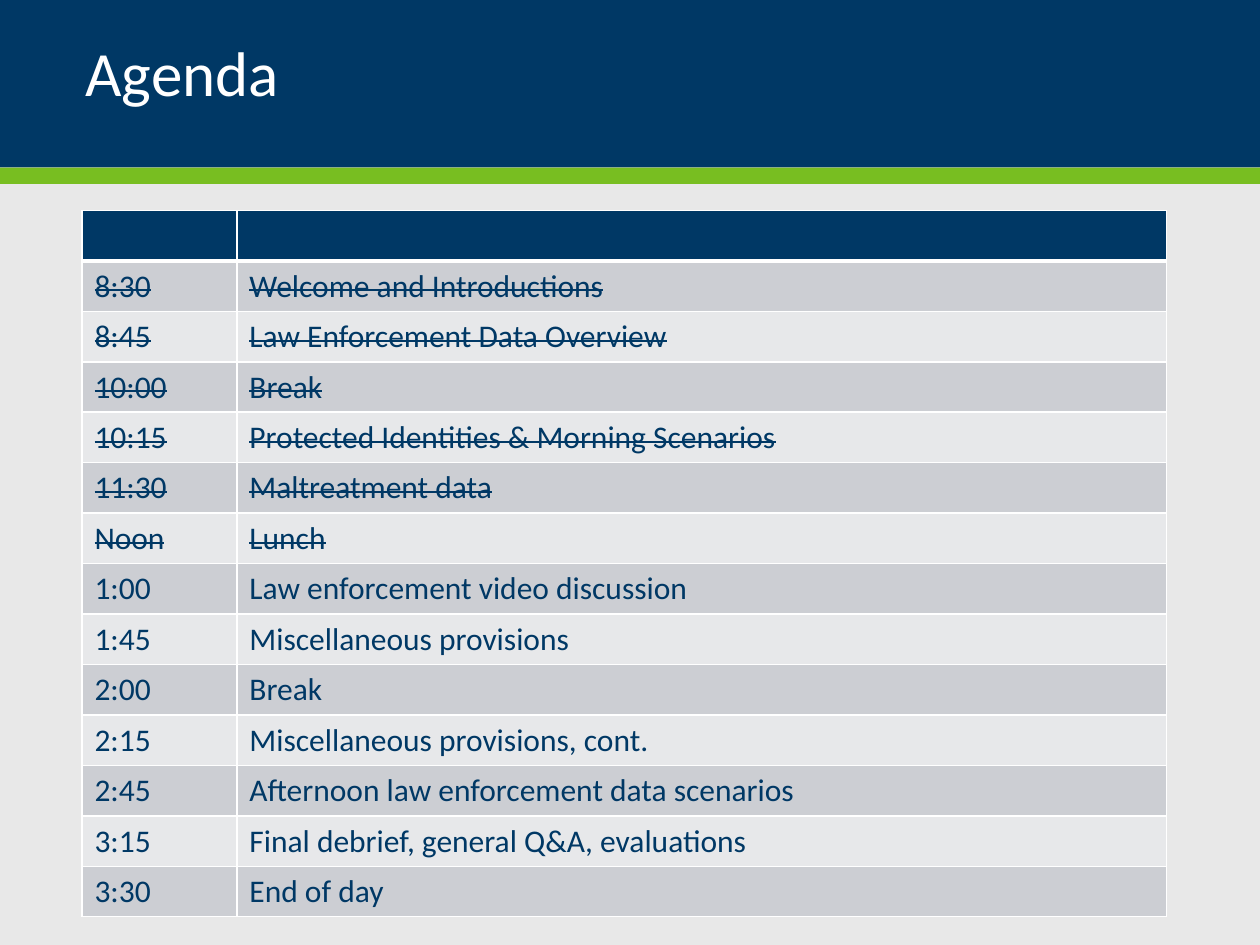
import pptx
import pptx.dml.color
import pptx.enum.shapes
import pptx.enum.text
import pptx.oxml
import pptx.oxml.ns
import pptx.util

NAVY, GREEN, WHITE = "003865", "78BE21", "FFFFFF"
PAGE, DARK_BAND, LIGHT_BAND = "E8E8E8", "CCCED3", "E7E8EA"
COLUMNS, ROWS = 100, 75

DONE = [
    ("8:30", "Welcome and Introductions"),
    ("8:45", "Law Enforcement Data Overview"),
    ("10:00", "Break"),
    ("10:15", "Protected Identities & Morning Scenarios"),
    ("11:30", "Maltreatment data"),
    ("Noon", "Lunch"),
]
UPCOMING = [
    ("1:00", "Law enforcement video discussion"),
    ("1:45", "Miscellaneous provisions"),
    ("2:00", "Break"),
    ("2:15", "Miscellaneous provisions, cont."),
    ("2:45", "Afternoon law enforcement data scenarios"),
    ("3:15", "Final debrief, general Q&A, evaluations"),
    ("3:30", "End of day"),
]


def rgb(value):
    return pptx.dml.color.RGBColor.from_string(value)


class AgendaSlide:
    font = "Calibri"

    def __init__(self, prs):
        self.s = prs.slides.add_slide(prs.slide_layouts[6])
        self.column = prs.slide_width / COLUMNS
        self.row = prs.slide_height / ROWS
        self.paint(self.s.background, PAGE)

    def box(self, left, top, width, height):
        units = (self.column, self.row) * 2
        return [round(n * unit) for n, unit in zip((left, top, width, height), units)]

    def paint(self, target, color):
        target.fill.solid()
        target.fill.fore_color.rgb = rgb(color)

    def add_text(self, p, text, size, color, strike=False):
        r = p.add_run()
        r.text = text
        style = {"name": self.font, "size": pptx.util.Pt(size)}
        for key, value in style.items():
            setattr(r.font, key, value)
        r.font.color.rgb = rgb(color)
        if strike:
            r.font._element.set("strike", "sngStrike")

    def band(self, at, color):
        sp = self.s.shapes.add_shape(pptx.enum.shapes.MSO_SHAPE.RECTANGLE, *self.box(*at))
        sp.shadow.inherit = False
        self.paint(sp, color)
        sp.line.fill.background()

    def title(self, at, text):
        tf = self.s.shapes.add_textbox(*self.box(*at)).text_frame
        settings = {
            "word_wrap": True,
            "vertical_anchor": pptx.enum.text.MSO_ANCHOR.MIDDLE,
        }
        for key, value in settings.items():
            setattr(tf, key, value)
        p = tf.paragraphs[0]
        p.line_spacing = 0.9
        self.add_text(p, text, 36, WHITE)

    def border(self, cell, **widths):
        tc_pr = cell._tc.get_or_add_tcPr()
        for side in "LRTB":
            width = pptx.util.Pt(widths.get(side, 1))
            tc_pr.append(pptx.oxml.parse_xml(
                f'<a:ln{side} {pptx.oxml.ns.nsdecls("a")} w="{width}"><a:solidFill>'
                f'<a:srgbClr val="{WHITE}"/></a:solidFill></a:ln{side}>'))

    def agenda(self, at, widths, done, upcoming):
        entries = done + upcoming
        table = self.s.shapes.add_table(len(entries) + 1, len(widths), *self.box(*at)).table
        for column, width in zip(table.columns, widths):
            column.width = round(width * self.column)
        for cell in table.rows[0].cells:
            self.border(cell, B=3)
            self.paint(cell, NAVY)
        for i, entry in enumerate(entries):
            for cell, text in zip(table.rows[i + 1].cells, entry):
                self.border(cell, T=1 if i else 3)
                self.paint(cell, LIGHT_BAND if i % 2 else DARK_BAND)
                self.add_text(cell.text_frame.paragraphs[0], text, 18, NAVY, i < len(done))


def main():
    prs = pptx.Presentation()
    prs.slide_width = pptx.util.Inches(10)
    prs.slide_height = pptx.util.Inches(7.5)
    slide = AgendaSlide(prs)
    slide.band((0, 0, COLUMNS, 13.3), NAVY)
    slide.band((0, 13.3, COLUMNS, 1.3), GREEN)
    slide.title((5.8, 1.4, 87.5, 9.2), "Agenda")
    slide.agenda((6.5, 16.7, 86.1, 55), (12.3, 73.8), DONE, UPCOMING)
    prs.save("out.pptx")


if __name__ == "__main__":
    main()
